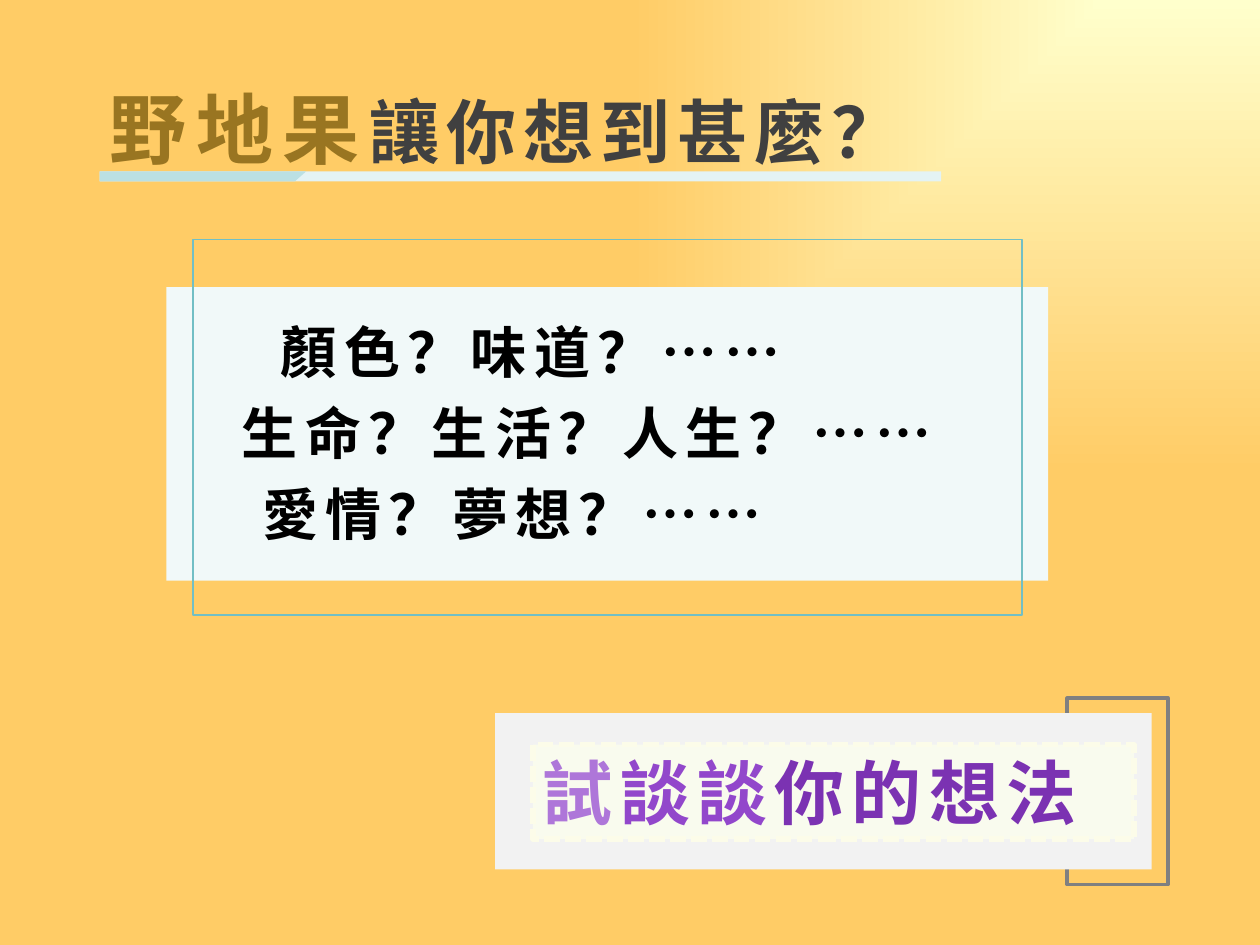
from lxml import etree
from pptx import Presentation
from pptx.dml.color import RGBColor
from pptx.enum.dml import MSO_LINE
from pptx.enum.shapes import MSO_SHAPE
from pptx.enum.text import MSO_ANCHOR, MSO_AUTO_SIZE, PP_ALIGN
from pptx.oxml import parse_xml
from pptx.oxml.ns import nsdecls, qn
from pptx.util import Inches, Pt

CJK = "Noto Sans CJK SC"


def rgb(value):
    return RGBColor.from_string(value)


def set_background(s):
    """Fill the slide with a gradient spreading from the top right corner."""
    s.background.fill.solid()
    bg_pr = s.background._cSld.bg.bgPr
    bg_pr.replace(bg_pr[0], parse_xml(
        f'<a:gradFill {nsdecls("a")} rotWithShape="0"><a:gsLst>'
        '<a:gs pos="0"><a:srgbClr val="FFFFCC"/></a:gs>'
        '<a:gs pos="100000"><a:srgbClr val="FFCC66"/></a:gs></a:gsLst>'
        '<a:path path="rect"><a:fillToRect l="100000" b="100000"/></a:path>'
        '</a:gradFill>'))


def style_shape(sp, fill=None, line=None, width=1):
    sp.shadow.inherit = False
    if fill:
        sp.fill.solid()
        sp.fill.fore_color.rgb = rgb(fill)
    else:
        sp.fill.background()
    if line:
        sp.line.color.rgb = rgb(line)
        sp.line.width = Pt(width)
    else:
        sp.line.fill.background()


def add_rect(s, x, y, w, h, **style):
    sp = s.shapes.add_shape(MSO_SHAPE.RECTANGLE, Inches(x), Inches(y),
                            Inches(w), Inches(h))
    style_shape(sp, **style)
    return sp


def place(s, sp, x, y, w, h):
    """Move a placeholder to a box, in front of what is already drawn."""
    sp.left, sp.top, sp.width, sp.height = map(Inches, (x, y, w, h))
    s.shapes._spTree.append(sp._element)


def set_frame(sp, inset_x, inset_y, wrap=True):
    tf = sp.text_frame
    tf.word_wrap = wrap
    tf.auto_size = MSO_AUTO_SIZE.SHAPE_TO_FIT_TEXT
    tf.vertical_anchor = MSO_ANCHOR.TOP
    tf.margin_left = tf.margin_right = Inches(inset_x)
    tf.margin_top = tf.margin_bottom = Inches(inset_y)
    return tf


def format_paragraph(p, before=8, indent=0):
    p.alignment = PP_ALIGN.LEFT
    p.line_spacing = 1.0
    p.space_before = Pt(before)
    p_pr = p._p.get_or_add_pPr()
    p_pr.set("marL", str(Inches(indent)))
    p_pr.set("indent", "0")
    etree.SubElement(p_pr, qn("a:buNone"))


def add_run(p, text, size, color, spacing=4.2, font=CJK,
            outline=("808080", 0.75), dash="solid"):
    """Add a bold run; two colours make a gradient from left to right."""
    r = p.add_run()
    r.text = text
    r.font.size, r.font.bold, r.font.name = Pt(size), True, font
    if isinstance(color, tuple):
        r.font.fill.gradient()
        r.font.fill.gradient_angle = 0
        for stop, value in zip(r.font.fill.gradient_stops, color):
            stop.color.rgb = rgb(value)
    else:
        r.font.color.rgb = rgb(color)
    r_pr = r._r.get_or_add_rPr()
    r_pr.set("spc", str(round(spacing * 100)))
    r_pr.find(qn("a:latin")).addnext(
        parse_xml(f'<a:ea {nsdecls("a")} typeface="{CJK}"/>'))
    if outline:
        value, width = outline
        r_pr.insert(0, parse_xml(
            f'<a:ln {nsdecls("a")} w="{Pt(width)}"><a:solidFill>'
            f'<a:srgbClr val="{value}"/></a:solidFill>'
            f'<a:prstDash val="{dash}"/></a:ln>'))


def add_heading(s, x, y, w, h):
    bar_h = 0.08
    bar_y = y + h - bar_h
    add_rect(s, x, bar_y, w, bar_h, fill="E4F3F4")
    builder = s.shapes.build_freeform(Inches(x), Inches(bar_y))
    builder.add_line_segments([
        (Inches(x + dx), Inches(bar_y + dy))
        for dx, dy in ((1.64, 0), (1.55, bar_h), (0, bar_h))])
    style_shape(builder.convert_to_shape(), fill="BBE0E3")

    title = s.shapes.title
    place(s, title, x, y, 6.51, 0.82)
    p = set_frame(title, 0.08, 0.04, wrap=False).paragraphs[0]
    format_paragraph(p, before=10)
    add_run(p, "野地果", 44, "997521", 5.5, "Arial", ("606060", 0.25), "dash")
    add_run(p, "讓你想到甚麼？", 40, "404040", 4.1, outline=None)


def add_ideas(s, x, y, w, h):
    add_rect(s, x, y + 0.38, w, 2.33, fill="F1F9F9")
    add_rect(s, x + 0.21, y, w - 0.42, h, line="72BFC5")

    body = s.placeholders[1]
    place(s, body, x + 0.5, y + 0.57, 6.01, 1.94)
    tf = set_frame(body, 0.1, 0.05)
    lines = (("顏色？味道？……", 0.31),
             ("生命？生活？人生？……", 0),
             ("愛情？夢想？……", 0.16))
    for i, (text, indent) in enumerate(lines):
        p = tf.add_paragraph() if i else tf.paragraphs[0]
        format_paragraph(p, indent=indent)
        add_run(p, text, 32, "000000")


def add_prompt(s, x, y, w, h):
    frame_w = 0.8
    add_rect(s, x + w - frame_w, y, frame_w, h, line="808080", width=2)
    add_rect(s, x, y + 0.12, w - 0.13, 1.24, fill="F2F2F2")
    label = add_rect(s, x + 0.3, y + 0.37, 4.77, 0.75,
                     fill="F9FBEE", line="FCFCE9", width=3)
    label.line.dash_style = MSO_LINE.SQUARE_DOT
    p = set_frame(label, 0.08, 0.04).paragraphs[0]
    format_paragraph(p)
    for text, color in (("試", "AE76D9"), ("談談", "9247CB"),
                        ("你的想法", ("7B32B2", "401A5D"))):
        add_run(p, text, 40, color)


def main():
    prs = Presentation()
    prs.slide_width, prs.slide_height = Inches(10), Inches(7.5)
    s = prs.slides.add_slide(prs.slide_layouts[1])
    set_background(s)
    add_ideas(s, 1.32, 1.9, 7, 2.98)
    add_heading(s, 0.79, 0.61, 6.68, 0.83)
    add_prompt(s, 3.93, 5.54, 5.34, 1.48)
    prs.save("out.pptx")


if __name__ == "__main__":
    main()
